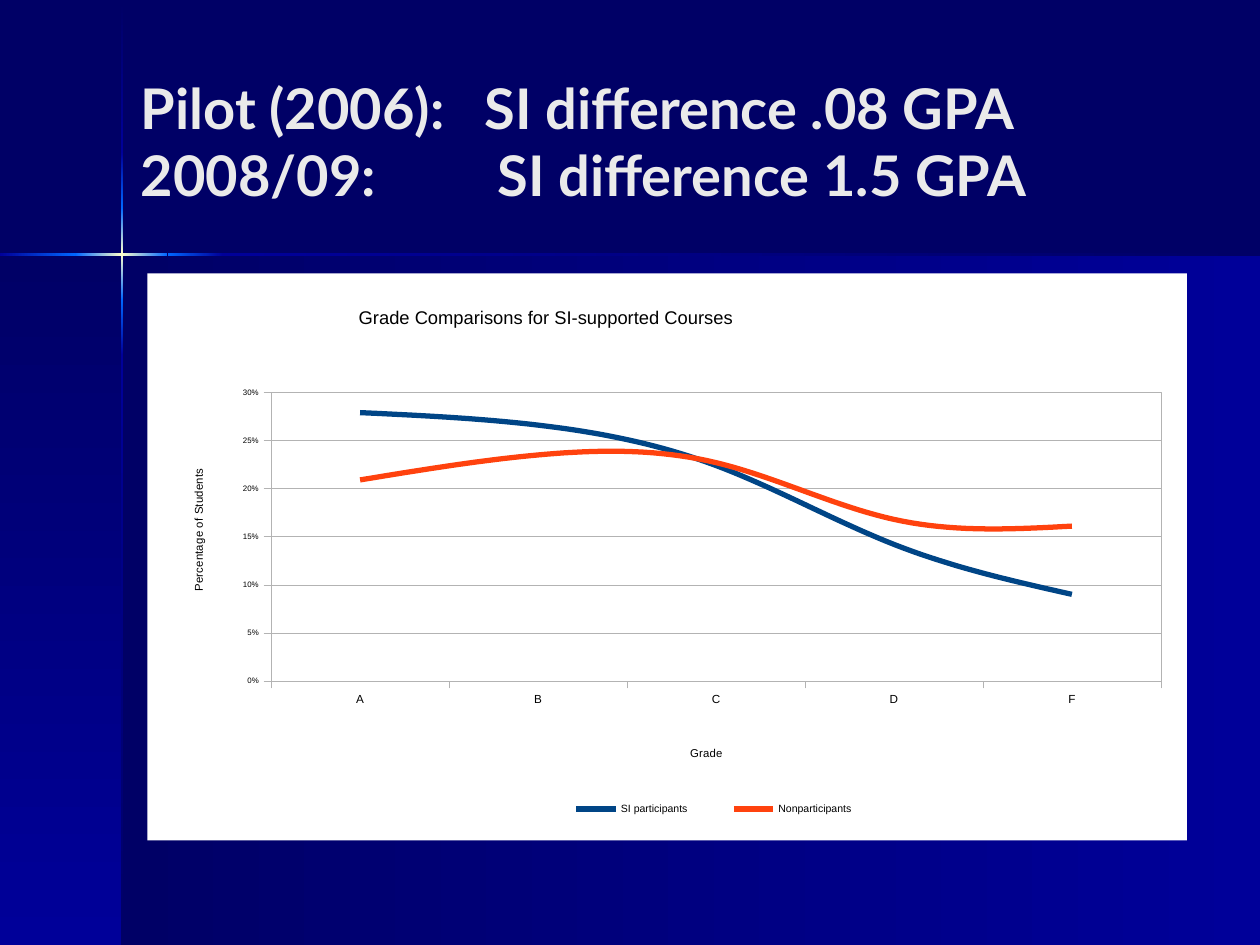
from lxml import etree
from pptx import Presentation
from pptx.chart.data import CategoryChartData as Data
from pptx.dml.color import RGBColor
from pptx.enum.chart import XL_CHART_TYPE as Kind, XL_LEGEND_POSITION as Spot
from pptx.enum.chart import XL_TICK_LABEL_POSITION as Label, XL_TICK_MARK as Tick
from pptx.enum.shapes import MSO_SHAPE as Shape
from pptx.enum.text import MSO_ANCHOR as Anchor
from pptx.oxml import parse_xml
from pptx.oxml.ns import nsdecls, qn
from pptx.util import Emu, Pt

PX = 9144  # one px is a hundredth of an inch
NAVY, BLUE, GLOW, CREAM = "000066", "000099", "0066FF", "FFFFCC"
GREY, BLACK = "B3B3B3", "000000"
ACROSS, DOWN = 0, 90


def px(n):
    return Emu(n * PX)


def rgb(code):
    return RGBColor.from_string(code)


def style(font, size, code, face="Arial", bold=False):
    font.size, font.name, font.bold = Pt(size), face, bold
    font.color.rgb = rgb(code)


def fade(slide, box, turn, *codes):
    """Bar with evenly spaced gradient stops."""
    bar = slide.shapes.add_shape(Shape.RECTANGLE, *map(px, box))
    bar.shadow.inherit = False
    bar.line.fill.background()
    bar.fill.solid()
    step = 100000 // (len(codes) - 1)
    stops = "".join(
        f'<a:gs pos="{i * step}"><a:srgbClr val="{c}"/></a:gs>'
        for i, c in enumerate(codes))
    grad = parse_xml(
        f'<a:gradFill {nsdecls("a")} rotWithShape="1"><a:gsLst>{stops}</a:gsLst>'
        f'<a:lin ang="{turn * 60000}" scaled="0"/></a:gradFill>')
    props = bar.element.spPr
    props.replace(props.find(qn("a:solidFill")), grad)


def backdrop(slide, box):
    """Two panels and a glowing cross whose arms meet at the corner."""
    left, top, wide, high = box
    slide.background.fill.solid()
    slide.background.fill.fore_color.rgb = rgb(NAVY)
    midx, midy = left + 97, top + 202
    fade(slide, (midx, midy, left + wide - midx, top + high - midy), ACROSS, NAVY, BLUE)
    fade(slide, (left, midy, 97, top + high - midy), DOWN, NAVY, BLUE)

    # Upright arm, top to bottom
    for start, end, codes in (
            (1, 121, (NAVY, BLUE)), (121, 165, (BLUE, GLOW)),
            (165, 238, (GLOW, CREAM, GLOW)),
            (238, 282, (GLOW, BLUE)), (282, high, (BLUE, NAVY))):
        fade(slide, (midx - 1, top + start, 2, end - start), DOWN, *codes)

    # Level arm, left to right
    for start, end, codes in (
            (0, 60, (BLUE, GLOW)), (60, 133, (GLOW, CREAM, GLOW)),
            (133, 177, (GLOW, BLUE)), (177, wide, (BLUE, NAVY))):
        fade(slide, (left + start, midy - 1, end - start, 2), ACROSS, *codes)


def heading(slide, box, lines):
    """Two-part lines, each with its own tab stop."""
    frame = slide.shapes.add_textbox(*map(px, box)).text_frame
    frame.word_wrap = True
    frame.vertical_anchor = Anchor.MIDDLE
    for i, (term, note, stop) in enumerate(lines):
        para = frame.add_paragraph() if i else frame.paragraphs[0]
        tabs = etree.SubElement(para._p.get_or_add_pPr(), qn("a:tabLst"))
        etree.SubElement(tabs, qn("a:tab"), pos=str(stop * PX), algn="l")
        for part in (term, "\t" + note):
            run = para.add_run()
            run.text = part
            style(run.font, 32, "EAEAEA", "Lato", True)


def place(node, x, y, w=None, h=None, inner=False):
    """Set a chart part's place as fractions of the chart."""
    for old in node.findall(qn("c:layout")):
        node.remove(old)
    layout = parse_xml(f'<c:layout {nsdecls("c")}><c:manualLayout/></c:layout>')
    pairs = [("layoutTarget", "inner")] if inner else []
    pairs += [("xMode", "edge"), ("yMode", "edge"), ("x", x), ("y", y)]
    if w:
        pairs += [("w", w), ("h", h)]
    for name, val in pairs:
        etree.SubElement(layout[0], qn("c:" + name), val=str(val))
    before = node.find(qn("c:tx"))
    if before is None:
        before = node.find(qn("c:legendPos"))
    if before is None:
        node.insert(0, layout)
    else:
        before.addnext(layout)


def caption(title, text, size, x, y):
    run = title.text_frame.paragraphs[0].add_run()
    run.text = text
    style(run.font, size, BLACK)
    place(title._element, x, y)


def thin(line):
    line.color.rgb, line.width = rgb(GREY), Pt(0.25)


def graph(slide, box):
    data = Data(number_format="0%")
    data.categories = list("ABCDF")
    data.add_series("SI participants", (0.279, 0.266, 0.224, 0.142, 0.09))
    data.add_series("Nonparticipants", (0.209, 0.235, 0.227, 0.168, 0.161))
    chart = slide.shapes.add_chart(Kind.LINE, *map(px, box), data).chart
    style(chart.font, 10, BLACK)
    caption(chart.chart_title, "Grade Comparisons for SI-supported Courses",
            10.5, 0.2, 0.05)
    chart.chart_title.include_in_layout = False

    # Series
    plot = chart.plots[0]
    plot.vary_by_categories = False
    for line, code in zip(plot.series, ("004586", "FF420E")):
        line.smooth = True
        line.format.line.color.rgb = rgb(code)
        line.format.line.width = Pt(3)

    # Axes
    for axis, text, size, mark, x, y in (
            (chart.category_axis, "Grade", 6.5, 6.7, 0.52, 0.83),
            (chart.value_axis, "Percentage of Students", 6.5, 4.5, 0.04, 0.34)):
        caption(axis.axis_title, text, size, x, y)
        style(axis.tick_labels.font, mark, BLACK)
        axis.tick_label_position = Label.LOW
        axis.major_tick_mark = Tick.OUTSIDE
        thin(axis.format.line)
    scale = chart.value_axis
    scale.minimum_scale, scale.maximum_scale, scale.major_unit = 0, 0.3, 0.05
    scale.tick_labels.number_format = "0%"
    scale.tick_labels.number_format_is_linked = False
    thin(scale.major_gridlines.format.line)

    # Legend
    chart.has_legend = True
    chart.legend.position = Spot.BOTTOM
    chart.legend.include_in_layout = False
    style(chart.legend.font, 6, BLACK)
    place(chart.legend._element, 0.37, 0.92, 0.35, 0.05)

    # White ground and thin plot frame
    space = chart._chartSpace
    area = space.chart.plotArea
    place(area, 0.119, 0.21, 0.856, 0.509, inner=True)
    area.append(parse_xml(
        f'<c:spPr {nsdecls("c", "a")}><a:noFill/><a:ln w="3175"><a:solidFill>'
        f'<a:srgbClr val="{GREY}"/></a:solidFill></a:ln></c:spPr>'))
    space.chart.addnext(parse_xml(
        f'<c:spPr {nsdecls("c", "a")}><a:solidFill><a:srgbClr val="FFFFFF"/>'
        '</a:solidFill><a:ln><a:noFill/></a:ln></c:spPr>'))


def main():
    deck = Presentation()
    deck.slide_width, deck.slide_height = px(1000), px(750)
    slide = deck.slides.add_slide(deck.slide_layouts[6])
    backdrop(slide, (0, 0, 1000, 750))
    heading(slide, (102, 33, 840, 157), (
        ("Pilot (2006):", "SI difference .08 GPA", 273),
        ("2008/09:", "SI difference 1.5 GPA", 283)))
    graph(slide, (117, 217, 825, 450))
    deck.save("out.pptx")


if __name__ == "__main__":
    main()
